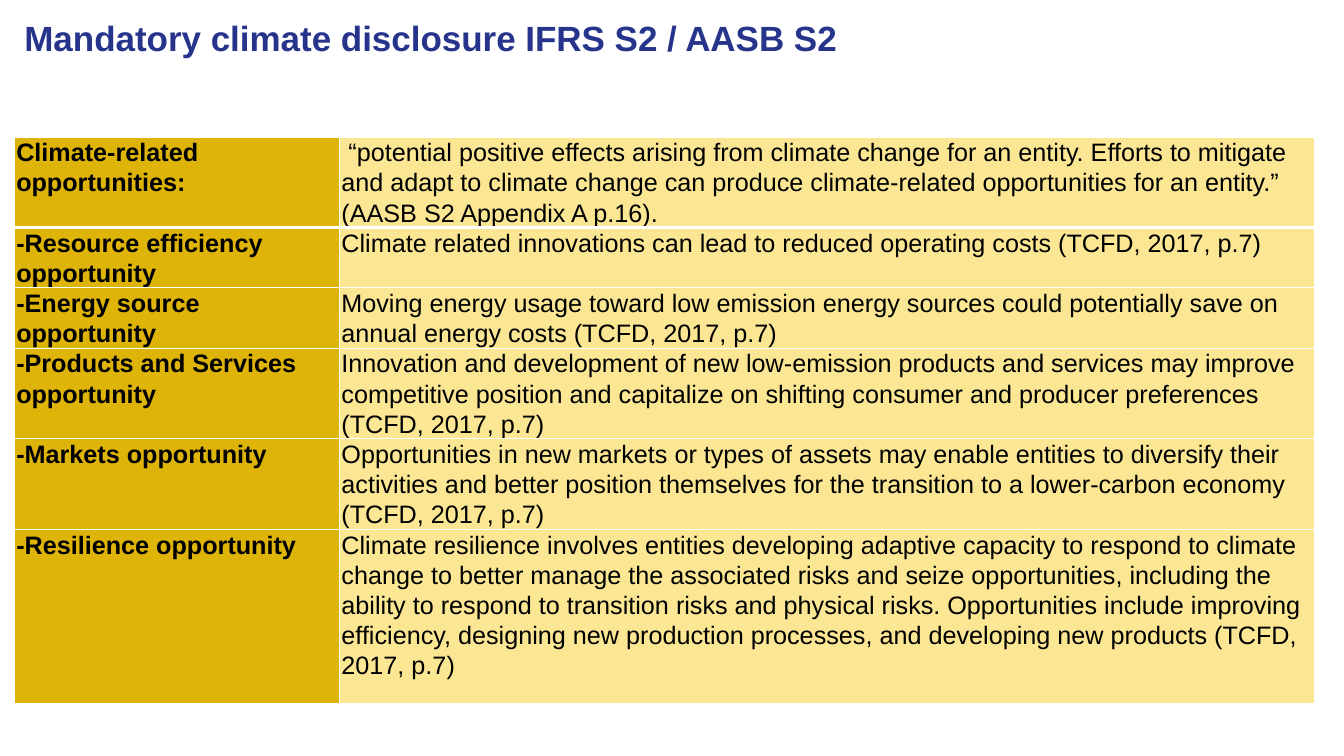
from dataclasses import dataclass

from lxml.etree import SubElement
from pptx import Presentation
from pptx.dml.color import RGBColor as RGB
from pptx.enum.text import MSO_ANCHOR as Anchor, MSO_AUTO_SIZE as AutoSize, PP_ALIGN as Align
from pptx.oxml.ns import qn
from pptx.util import Cm, Pt


@dataclass(frozen=True)
class Theme:
    font: str = "Arial"
    title_size: int = 25
    body_size: int = 18
    title: str = "27348B"
    text: str = "000000"
    label_fill: str = "DEB408"
    detail_fill: str = "FBE793"
    border: str = "FFFFFF"
    thin: int = 1
    thick: int = 3


THEME = Theme()
TITLE = "Mandatory climate disclosure IFRS S2 / AASB S2"
OPPORTUNITIES = [
    (2.18, "Climate-related opportunities:",
     " “potential positive effects arising from climate change for an entity. Efforts to "
     "mitigate and adapt to climate change can produce climate-related opportunities for "
     "an entity.” (AASB S2 Appendix A p.16)."),
    (1.45, "-Resource efficiency opportunity",
     "Climate related innovations can lead to reduced operating costs (TCFD, 2017, p.7)"),
    (1.45, "-Energy source opportunity",
     "Moving energy usage toward low emission energy sources could potentially save on "
     "annual energy costs (TCFD, 2017, p.7)"),
    (2.18, "-Products and Services opportunity",
     "Innovation and development of new low-emission products and services may improve "
     "competitive position and capitalize on shifting consumer and producer preferences "
     "(TCFD, 2017, p.7)"),
    (2.18, "-Markets opportunity",
     "Opportunities in new markets or types of assets may enable entities to diversify "
     "their activities and better position themselves for the transition to a "
     "lower-carbon economy (TCFD, 2017, p.7)"),
    (4.39, "-Resilience opportunity",
     "Climate resilience involves entities developing adaptive capacity to respond to "
     "climate change to better manage the associated risks and seize opportunities, "
     "including the ability to respond to transition risks and physical risks. "
     "Opportunities include improving efficiency, designing new production processes, "
     "and developing new products (TCFD, 2017, p.7)"),
]


def style_text(p, size, color, bold):
    for r in p.runs:
        r.font.name = THEME.font
        r.font.size = Pt(size)
        r.font.bold = bold
        r.font.color.rgb = RGB.from_string(color)


def set_borders(cell, **widths):
    tc_pr = cell._tc.get_or_add_tcPr()
    for i, side in enumerate("LRTB"):
        width = widths.get(side, THEME.thin)
        ln = SubElement(tc_pr, qn(f"a:ln{side}"), w=str(Pt(width)))
        fill = SubElement(ln, qn("a:solidFill"))
        SubElement(fill, qn("a:srgbClr"), val=THEME.border)
        tc_pr.insert(i, ln)


def add_title(slide, left, top, width, height):
    sp = slide.shapes.title
    sp.left, sp.top, sp.width, sp.height = left, top, width, height
    tf = sp.text_frame
    tf.text = TITLE
    tf.word_wrap = True
    tf.auto_size = AutoSize.NONE
    tf.vertical_anchor = Anchor.TOP
    p = tf.paragraphs[0]
    p.alignment = Align.LEFT
    style_text(p, THEME.title_size, THEME.title, True)


def fill_cell(cell, text, fill, bold):
    cell.text = text
    cell.margin_left = cell.margin_right = Cm(0.05)
    cell.margin_top = cell.margin_bottom = 0
    cell.fill.solid()
    cell.fill.fore_color.rgb = RGB.from_string(fill)
    p = cell.text_frame.paragraphs[0]
    p.line_spacing = 1.07
    p.space_after = Pt(8)
    style_text(p, THEME.body_size, THEME.text, bold)


def add_opportunities(slide, left, top, width, height):
    table = slide.shapes.add_table(len(OPPORTUNITIES), 2, left, top, width, height).table
    table.first_row = table.horz_banding = False
    table.columns[0].width = width // 4
    table.columns[1].width = width - width // 4
    for i, (row_height, label, detail) in enumerate(OPPORTUNITIES):
        table.rows[i].height = Cm(row_height)
        fill_cell(table.cell(i, 0), label, THEME.label_fill, True)
        fill_cell(table.cell(i, 1), detail, THEME.detail_fill, False)
        for cell in table.rows[i].cells:
            set_borders(cell, T=THEME.thick if i == 1 else THEME.thin,
                        B=THEME.thick if i == 0 else THEME.thin)


def main():
    prs = Presentation()
    prs.slide_width, prs.slide_height = Cm(33.87), Cm(19.05)
    slide = prs.slides.add_slide(prs.slide_layouts[5])
    add_title(slide, Cm(0.36), Cm(0.28), Cm(24.77), Cm(2.26))
    add_opportunities(slide, Cm(0.36), Cm(3.45), Cm(32.78), Cm(13.83))
    prs.save("out.pptx")


if __name__ == "__main__":
    main()
